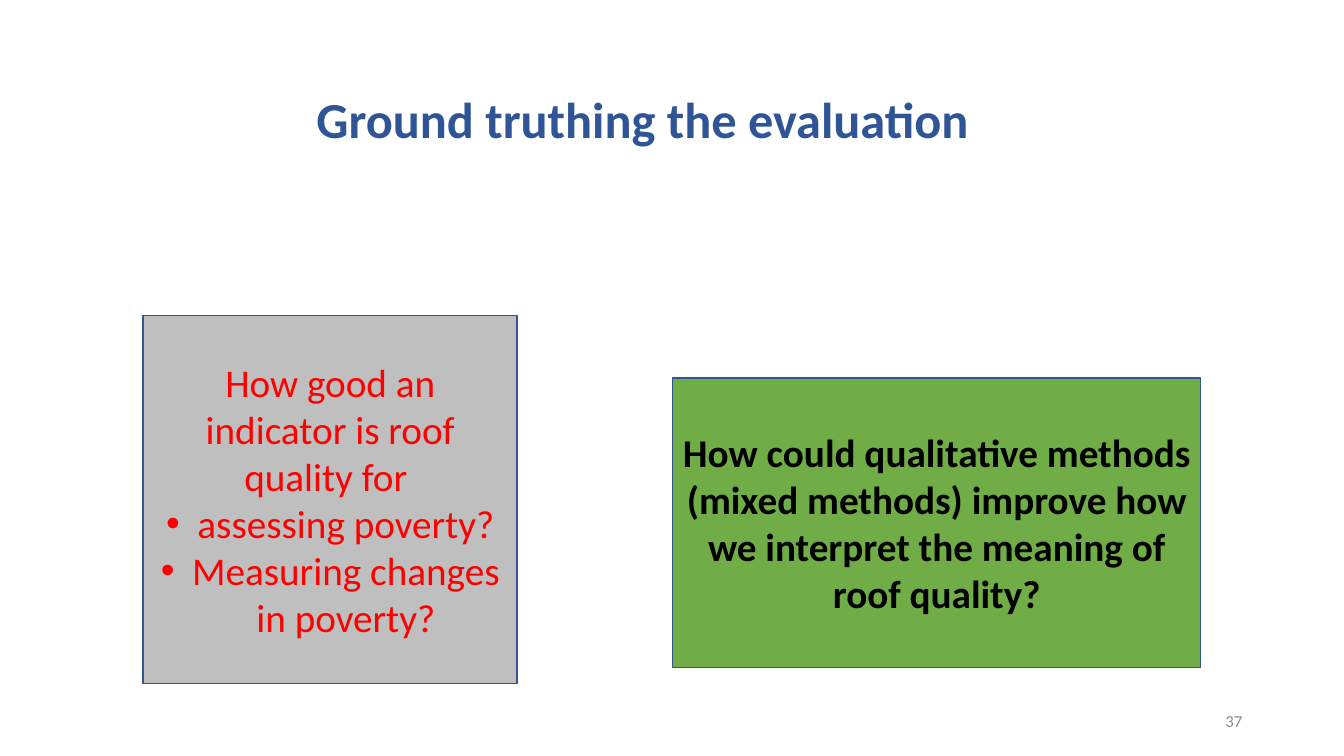
from lxml import etree
from pptx import Presentation
from pptx.dml.color import RGBColor
from pptx.enum import shapes, text
from pptx.oxml.ns import qn
from pptx.util import Inches, Pt

FONT = "Calibri"
BORDER = "325491"
HANGING = 0.31

TITLE = "Ground truthing the evaluation"
PAGE_NUMBER = "37"
INDICATOR_QUESTION = [
    ("How good an indicator is roof quality for ", False),
    ("assessing poverty?", True),
    ("Measuring changes in poverty?", True),
]
METHODS_QUESTION = [
    ("How could qualitative methods (mixed methods) improve how "
     "we interpret the meaning of roof quality?", False),
]
BOXES = [
    ((1.42, 3.13, 3.71, 3.65), "BFBFBF", INDICATOR_QUESTION, "FF0000", False),
    ((6.67, 3.75, 5.24, 2.87), "70AD47", METHODS_QUESTION, "000000", True),
]


def rgb(value):
    return RGBColor.from_string(value)


def add_bullet(p):
    pPr = p._p.get_or_add_pPr()
    pPr.set("marL", str(Inches(HANGING)))
    pPr.set("indent", str(-Inches(HANGING)))
    etree.SubElement(pPr, qn("a:buFont")).set("typeface", "Arial")
    etree.SubElement(pPr, qn("a:buChar")).set("char", "•")


def write(sp, lines, size=28, color="000000", bold=False,
          align=text.PP_ALIGN.CENTER, anchor=text.MSO_ANCHOR.MIDDLE):
    tf = sp.text_frame
    tf.word_wrap = True
    tf.vertical_anchor = anchor
    for i, (line, bulleted) in enumerate(lines):
        p = tf.add_paragraph() if i else tf.paragraphs[0]
        p.alignment = align
        if bulleted:
            add_bullet(p)
        r = p.add_run()
        r.text = line
        r.font.name = FONT
        r.font.size = Pt(size)
        r.font.bold = bold
        r.font.color.rgb = rgb(color)


def add_box(s, at, fill):
    sp = s.shapes.add_shape(shapes.MSO_SHAPE.RECTANGLE, *map(Inches, at))
    sp.shadow.inherit = False
    sp.fill.solid()
    sp.fill.fore_color.rgb = rgb(fill)
    sp.line.color.rgb = rgb(BORDER)
    sp.line.width = Pt(1)
    return sp


def main():
    prs = Presentation()
    prs.slide_width, prs.slide_height = Inches(13.33), Inches(7.5)
    s = prs.slides.add_slide(prs.slide_layouts[6])

    number = s.shapes.add_textbox(*map(Inches, (9.42, 6.95, 3, 0.4)))
    write(number, [(PAGE_NUMBER, False)], size=12, color="8C8C8C",
          align=text.PP_ALIGN.RIGHT)

    for at, fill, lines, color, bold in BOXES:
        write(add_box(s, at, fill), lines, color=color, bold=bold)

    title = s.shapes.add_textbox(*map(Inches, (1.42, 0.82, 9.91, 0.71)))
    write(title, [(TITLE, False)], size=36, color="2F5597", bold=True,
          anchor=text.MSO_ANCHOR.TOP)
    title.text_frame.auto_size = text.MSO_AUTO_SIZE.SHAPE_TO_FIT_TEXT

    prs.save("out.pptx")


if __name__ == "__main__":
    main()
